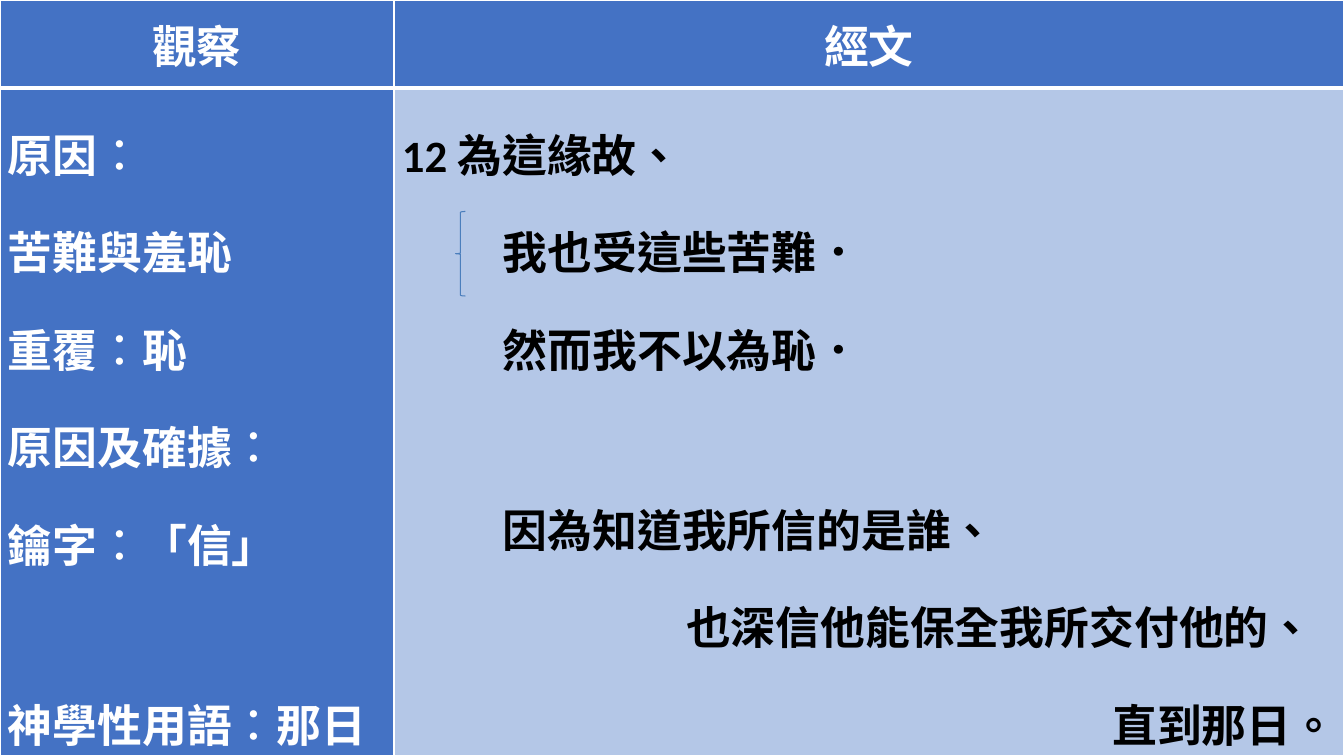
import lxml.etree
import pptx
import pptx.dml.color
import pptx.enum.lang
import pptx.enum.shapes
import pptx.enum.text
import pptx.oxml
import pptx.oxml.ns
import pptx.util

Cm = pptx.util.Cm
Pt = pptx.util.Pt

COLORS = {
    "header": "4472C4",
    "body": "B4C7E7",
    "light": "FFFFFF",
    "dark": "000000",
    "brace": "4B7EBC",
}

SKIPPED_LINE = 59
VERSE = 2.54

OBSERVATIONS = [
    ("原因︰", 0, 0),
    ("苦難與羞恥", 0, 0),
    ("重覆︰恥", 0, 0),
    ("原因及確據︰", 0, 0),
    ("鑰字︰「信」", 0, 0),
    ("神學性用語︰那日", 0, SKIPPED_LINE),
]
SCRIPTURE = [
    ("12 為這緣故、", 0, 0),
    ("我也受這些苦難．", VERSE, 0),
    ("然而我不以為恥．", VERSE, 0),
    ("因為知道我所信的是誰、", VERSE, SKIPPED_LINE),
    ("也深信他能保全我所交付他的、", 7.16, 0),
    ("直到那日。", 17.9, 0),
]


def rgb(name):
    return pptx.dml.color.RGBColor.from_string(COLORS[name])


class SlideBuilder:
    font = "Calibri"
    size = Pt(32)

    def __init__(self, prs):
        self.slide = prs.slides.add_slide(prs.slide_layouts[6])

    def table(self, widths, heights):
        frame = self.slide.shapes.add_table(
            len(heights), len(widths), 0, 0, Cm(sum(widths)), Cm(sum(heights)))
        table = frame.table
        for column, width in zip(table.columns, widths):
            column.width = Cm(width)
        for row, height in zip(table.rows, heights):
            row.height = Cm(height)
        return table

    def paragraph(self, p, text, color, indent=0, before=0):
        if indent:
            p._p.get_or_add_pPr().set("marL", str(Cm(indent)))
        if before:
            p.space_before = Pt(before)
        r = p.add_run()
        r.text = text
        r.font.name = self.font
        r.font.size = self.size
        r.font.bold = True
        r.font.color.rgb = rgb(color)
        r.font.language_id = pptx.enum.lang.MSO_LANGUAGE_ID.TRADITIONAL_CHINESE

    def cell(self, cell, fill, borders, margin_right=0.2):
        cell.fill.solid()
        cell.fill.fore_color.rgb = rgb(fill)
        cell.margin_left, cell.margin_right = Cm(0.2), Cm(margin_right)
        cell.margin_top = cell.margin_bottom = 0
        tcPr = cell._tc.get_or_add_tcPr()
        for i, (side, width) in enumerate(borders.items()):
            ln = pptx.oxml.parse_xml(
                f'<a:ln{side} {pptx.oxml.ns.nsdecls("a")} w="{Pt(width)}">'
                f'<a:solidFill><a:srgbClr val="{COLORS["light"]}"/></a:solidFill>'
                f'</a:ln{side}>')
            tcPr.insert(i, ln)

    def header(self, cell, text):
        self.cell(cell, "header", {"L": 1, "R": 1, "T": 1, "B": 3})
        cell.vertical_anchor = pptx.enum.text.MSO_ANCHOR.MIDDLE
        p = cell.text_frame.paragraphs[0]
        p.alignment = pptx.enum.text.PP_ALIGN.CENTER
        self.paragraph(p, text, "light")

    def body(self, cell, lines, fill, color, margin_right):
        self.cell(cell, fill, {"L": 1, "R": 1, "T": 3, "B": 1}, margin_right)
        tf = cell.text_frame
        for i, (text, indent, before) in enumerate(lines):
            p = tf.add_paragraph() if i else tf.paragraphs[0]
            p.line_spacing = 1.5
            self.paragraph(p, text, color, indent, before)

    def brace(self, left, top, width, height):
        sp = self.slide.shapes.add_shape(
            pptx.enum.shapes.MSO_SHAPE.LEFT_BRACE,
            Cm(left), Cm(top), Cm(width), Cm(height))
        sp.shadow.inherit = False
        sp.fill.background()
        sp.line.color.rgb = rgb("brace")
        sp.line.width = Pt(0.75)


def main():
    prs = pptx.Presentation()
    prs.slide_width, prs.slide_height = Cm(33.87), Cm(19.05)
    s = SlideBuilder(prs)
    table = s.table([9.93, 23.94], [2.21, 16.84])
    for column, title in enumerate(["觀察", "經文"]):
        s.header(table.cell(0, column), title)
    s.body(table.cell(1, 0), OBSERVATIONS, "header", "light", 0.2)
    s.body(table.cell(1, 1), SCRIPTURE, "body", "dark", 0)
    s.brace(11.48, 5.33, 0.25, 2.13)
    prs.save("out.pptx")


if __name__ == "__main__":
    main()
